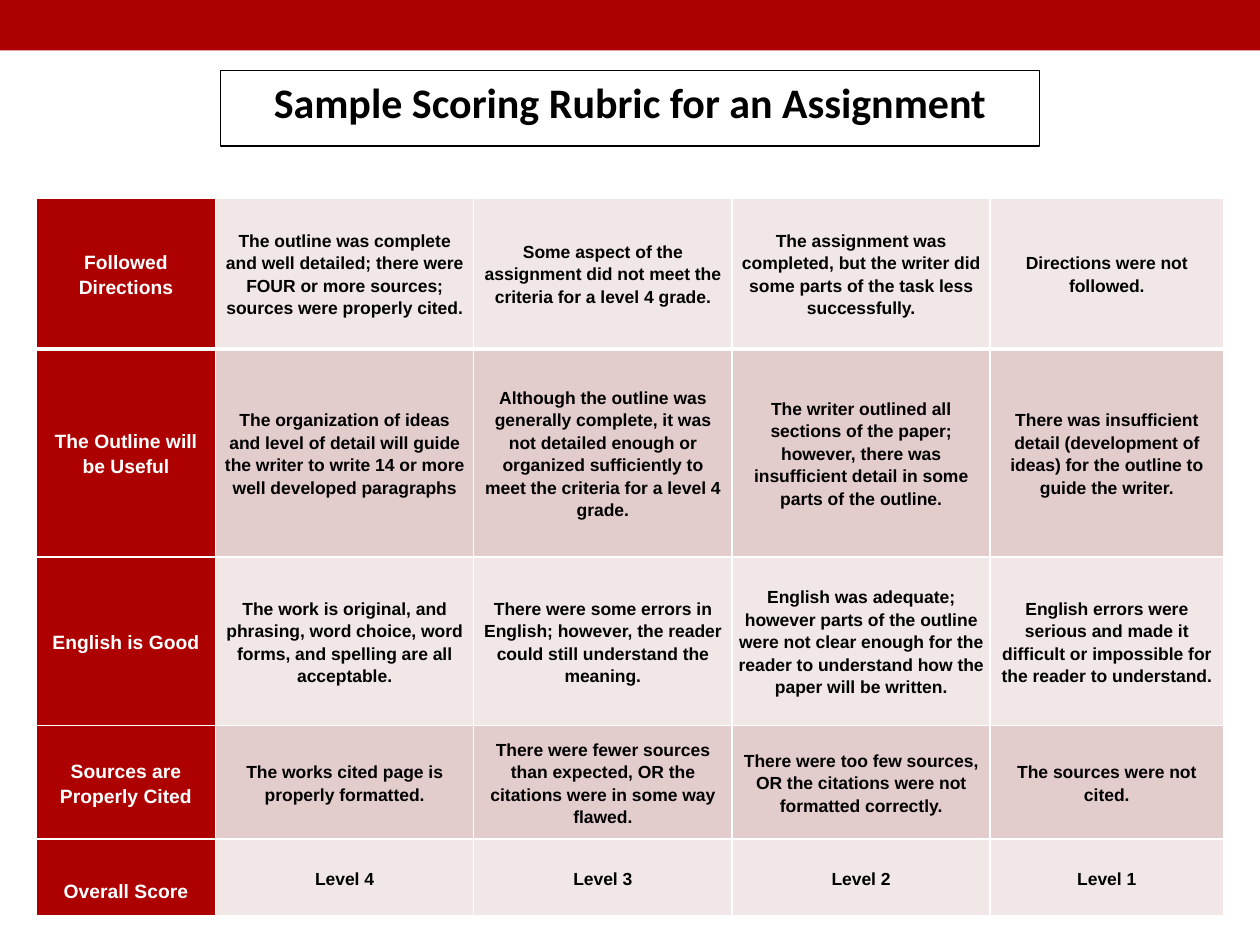
import pptx
import pptx.util
import pptx.dml.color
import pptx.enum.shapes
import pptx.enum.text
from lxml import etree

Inches, Pt = pptx.util.Inches, pptx.util.Pt
CENTER = pptx.enum.text.PP_ALIGN.CENTER
MIDDLE = pptx.enum.text.MSO_ANCHOR.MIDDLE
WIDTH, HEIGHT = Inches(10), Inches(7.5)
COLORS = {"red": "AD0101", "light": "F1E7E7", "dark": "E3CCCC",
          "white": "FFFFFF", "black": "000000"}
COLUMNS = [1.42, 2.05, 2.05, 2.05, 1.85]
ROWS = [1.2, 1.65, 1.34, 0.9, 0.61]
RUBRIC = [
    ["Followed Directions",
     "The outline was complete and well detailed; there were FOUR or more sources; "
     "sources were properly cited.",
     "Some aspect of the assignment did not meet the criteria for a level 4 grade.",
     "The assignment was completed, but the writer did some parts of the task less "
     "successfully.",
     "Directions were not followed."],
    ["The Outline will be Useful",
     "The organization of ideas and level of detail will guide the writer to write "
     "14 or more well developed paragraphs",
     "Although the outline was generally complete, it was not detailed enough or "
     "organized sufficiently to meet the criteria for a level 4 grade.",
     "The writer outlined all sections of the paper; however, there was insufficient "
     "detail in some parts of the outline.",
     "There was insufficient detail (development of ideas) for the outline to guide "
     "the writer."],
    ["English is Good",
     "The work is original, and phrasing, word choice, word forms, and spelling are "
     "all acceptable.",
     "There were some errors in English; however, the reader could still understand "
     "the meaning.",
     "English was adequate; however parts of the outline were not clear enough for "
     "the reader to understand how the paper will be written.",
     "English errors were serious and made it difficult or impossible for the reader "
     "to understand."],
    ["Sources are Properly Cited",
     "The works cited page is properly formatted.",
     "There were fewer sources than expected, OR the citations were in some way flawed.",
     "There were too few sources, OR the citations were not formatted correctly.",
     "The sources were not cited."],
    ["Overall Score", "Level 4", "Level 3", "Level 2", "Level 1"],
]


def rgb(name):
    return pptx.dml.color.RGBColor.from_string(COLORS[name])


def format_paragraph(p, font, size, color):
    p.alignment = CENTER
    p.font.name, p.font.size, p.font.bold = font, Pt(size), True
    p.font.color.rgb = rgb(color)


def add_band(s):
    band = s.shapes.add_shape(pptx.enum.shapes.MSO_SHAPE.RECTANGLE,
                              0, 0, WIDTH, Inches(0.4))
    band.shadow.inherit = False
    band.fill.solid()
    band.fill.fore_color.rgb = rgb("red")
    band.line.fill.background()


def set_title(s, text):
    title = s.shapes.title
    title.left, title.top = Inches(1.75), Inches(0.56)
    title.width, title.height = WIDTH - 2 * title.left, Inches(0.6)
    title.fill.solid()
    title.fill.fore_color.rgb = rgb("white")
    title.line.color.rgb = rgb("black")
    title.line.width = Pt(0.75)
    tf = title.text_frame
    tf.text = text
    tf.auto_size = pptx.enum.text.MSO_AUTO_SIZE.NONE
    tf.vertical_anchor = pptx.enum.text.MSO_ANCHOR.TOP
    format_paragraph(tf.paragraphs[0], "Calibri", 24, "black")


def set_borders(cell, **widths):
    """Draw white cell borders; widths are points for L, R, T and B."""
    ns = "http://schemas.openxmlformats.org/drawingml/2006/main"
    tc_pr = cell._tc.get_or_add_tcPr()
    for side, width in widths.items():
        ln = etree.SubElement(tc_pr, f"{{{ns}}}ln{side}", w=str(Pt(width)))
        fill = etree.SubElement(ln, f"{{{ns}}}solidFill")
        etree.SubElement(fill, f"{{{ns}}}srgbClr", val=COLORS["white"])


def fill_cell(cell, text, row, is_label):
    cell.text = text
    cell.vertical_anchor = MIDDLE
    cell.margin_left = cell.margin_right = Inches(0.05)
    cell.margin_top = cell.margin_bottom = 0
    set_borders(cell, L=1, R=1, T=3 if row == 1 else 1, B=3 if row == 0 else 1)
    cell.fill.solid()
    band = "dark" if row % 2 else "light"
    cell.fill.fore_color.rgb = rgb("red" if is_label else band)
    p = cell.text_frame.paragraphs[0]
    p.line_spacing = 1.15
    format_paragraph(p, "Arial", 11 if is_label else 10,
                     "white" if is_label else "black")


def add_rubric(s):
    width, height = Inches(sum(COLUMNS)), Inches(sum(ROWS))
    table = s.shapes.add_table(len(ROWS), len(COLUMNS), (WIDTH - width) // 2,
                               Inches(1.57), width, height).table
    table.first_row = table.horz_banding = False
    table.first_col = True
    for column, size in zip(table.columns, COLUMNS):
        column.width = Inches(size)
    for row, size in zip(table.rows, ROWS):
        row.height = Inches(size)
    for i, texts in enumerate(RUBRIC):
        for j, text in enumerate(texts):
            fill_cell(table.cell(i, j), text, i, j == 0)
    table.cell(len(ROWS) - 1, 0).margin_top = Inches(0.2)


def main():
    prs = pptx.Presentation()
    prs.slide_width, prs.slide_height = WIDTH, HEIGHT
    s = prs.slides.add_slide(prs.slide_layouts[5])
    add_band(s)
    set_title(s, "Sample Scoring Rubric for an Assignment")
    add_rubric(s)
    prs.save("out.pptx")


if __name__ == "__main__":
    main()
